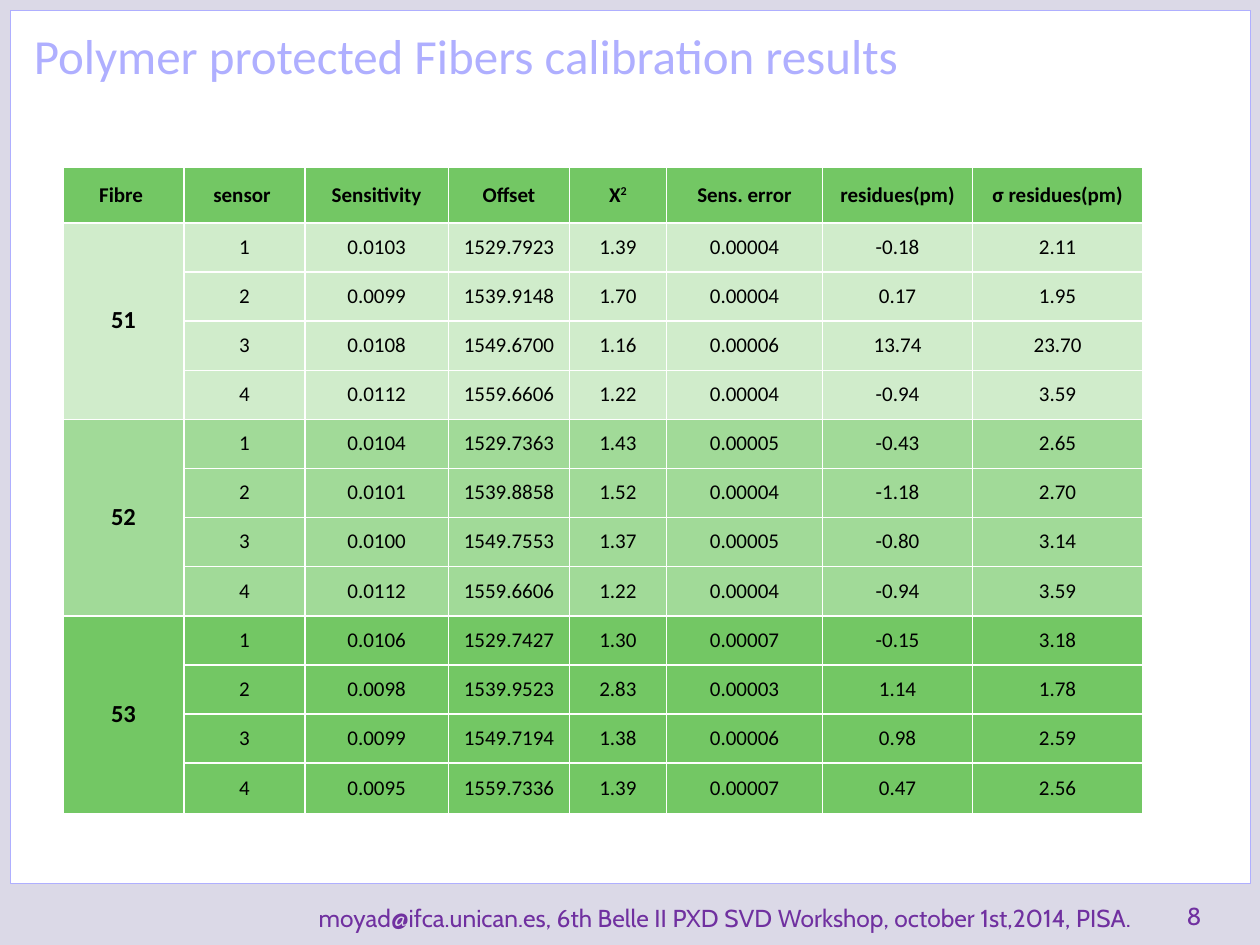
"""Build the fibre calibration results slide."""
from lxml import etree
from pptx import Presentation, util as u
from pptx.dml.color import RGBColor
from pptx.enum import shapes, text
from pptx.oxml.ns import qn

TITLE = "Polymer protected Fibers calibration results"
FOOT = "moyad@ifca.unican.es, 6th Belle II PXD SVD Workshop, october 1st,2014, PISA."
HEAD = ["Fibre ", "sensor ", "Sensitivity", "Offset", "X^2", "Sens. error",
        "residues(pm)", "σ residues(pm)"]
FIBRES = [
    ("51", "D0ECCB", [
        "0.0103 1529.7923 1.39 0.00004 -0.18 2.11",
        "0.0099 1539.9148 1.70 0.00004 0.17 1.95",
        "0.0108 1549.6700 1.16 0.00006 13.74 23.70",
        "0.0112 1559.6606 1.22 0.00004 -0.94 3.59"]),
    ("52", "A1DA98", [
        "0.0104 1529.7363 1.43 0.00005 -0.43 2.65",
        "0.0101 1539.8858 1.52 0.00004 -1.18 2.70",
        "0.0100 1549.7553 1.37 0.00005 -0.80 3.14",
        "0.0112 1559.6606 1.22 0.00004 -0.94 3.59"]),
    ("53", "73C764", [
        "0.0106 1529.7427 1.30 0.00007 -0.15 3.18",
        "0.0098 1539.9523 2.83 0.00003 1.14 1.78",
        "0.0099 1549.7194 1.38 0.00006 0.98 2.59",
        "0.0095 1559.7336 1.39 0.00007 0.47 2.56"]),
]
COLS = [0.96, 0.96, 1.14, 0.96, 0.77, 1.24, 1.19, 1.35]
ROWS = [0.44] + [0.39] * 11 + [0.4]
GREEN, LILAC, PURPLE = "73C764", "AFAFFF", "7030A0"


def color(code):
    """Turn a hex string into a colour."""
    return RGBColor.from_string(code)


def add_run(para, words, size, face, code, bold=False):
    """Add one styled run to a paragraph."""
    run = para.add_run()
    run.text = words
    font = run.font
    font.size, font.name, font.bold = u.Pt(size), face, bold
    font.color.rgb = color(code)
    return run


def add_label(slide, place, words, size, face, code, anchor, align):
    """Add a one-line text box."""
    box = slide.shapes.add_textbox(*map(u.Inches, place))
    frame = box.text_frame
    frame.word_wrap = True
    frame.vertical_anchor = anchor
    para = frame.paragraphs[0]
    para.alignment = align
    add_run(para, words, size, face, code)


def style_cell(cell, fill):
    """Give a cell its borders, fill, margins and anchor."""
    props = cell._tc.get_or_add_tcPr()
    for side in ("lnL", "lnR", "lnT", "lnB"):
        line = etree.SubElement(props, qn("a:" + side), w=str(u.Pt(1)))
        solid = etree.SubElement(line, qn("a:solidFill"))
        etree.SubElement(solid, qn("a:srgbClr"), val="FFFFFF")
    cell.fill.solid()
    cell.fill.fore_color.rgb = color(fill)
    cell.margin_left = cell.margin_top = cell.margin_right = u.Inches(0.01)
    cell.margin_bottom = 0
    cell.vertical_anchor = text.MSO_ANCHOR.MIDDLE


def write_cell(cell, words, size=12, bold=False):
    """Write centred text, raising what follows a caret."""
    para = cell.text_frame.paragraphs[0]
    para.alignment = text.PP_ALIGN.CENTER
    para.line_spacing = 0.8
    base, _, power = words.partition("^")
    add_run(para, base, size, "Calibri", "000000", bold)
    if power:
        run = add_run(para, power, size, "Calibri", "000000", bold)
        run._r.get_or_add_rPr().set("baseline", "30000")


def add_grid(slide):
    """Add the results table."""
    place = (0.5, 1.33, sum(COLS), sum(ROWS))
    grid = slide.shapes.add_table(len(ROWS), len(COLS), *map(u.Inches, place)).table
    for col, wide in zip(grid.columns, COLS):
        col.width = u.Inches(wide)
    for row, high in zip(grid.rows, ROWS):
        row.height = u.Inches(high)
    fills = [GREEN] + [fill for _, fill, rows in FIBRES for _ in rows]
    for row, fill in zip(grid.rows, fills):
        for cell in row.cells:
            style_cell(cell, fill)
    for c, words in enumerate(HEAD):
        write_cell(grid.cell(0, c), words, bold=True)
    top = 1
    for name, _, rows in FIBRES:
        grid.cell(top, 0).merge(grid.cell(top + len(rows) - 1, 0))
        write_cell(grid.cell(top, 0), name, 14, True)
        for r, row in enumerate(rows):
            for c, words in enumerate([str(r + 1)] + row.split(), 1):
                write_cell(grid.cell(top + r, c), words)
        top += len(rows)


def main():
    """Build and save the slide."""
    deck = Presentation()
    deck.slide_width, deck.slide_height = u.Inches(10), u.Inches(7.5)
    slide = deck.slides.add_slide(deck.slide_layouts[6])
    back = slide.background.fill
    back.solid()
    back.fore_color.rgb = color("DBD9E7")
    panel = slide.shapes.add_shape(shapes.MSO_SHAPE.RECTANGLE,
                                   *map(u.Inches, (0.08, 0.08, 9.84, 6.93)))
    panel.shadow.inherit = False
    panel.fill.solid()
    panel.fill.fore_color.rgb = color("FFFFFF")
    panel.line.color.rgb = color(LILAC)
    panel.line.width = u.Pt(0.25)
    anchor, align = text.MSO_ANCHOR, text.PP_ALIGN
    add_label(slide, (0.17, 0.15, 7.75, 1.26), TITLE, 28, "Calibri", LILAC,
              anchor.TOP, align.LEFT)
    add_label(slide, (9.32, 6.93, 0.58, 0.5), "8", 14, "Cabin", PURPLE,
              anchor.BOTTOM, align.LEFT)
    add_label(slide, (1.83, 6.95, 7.25, 0.5), FOOT, 14, "Cabin", PURPLE,
              anchor.BOTTOM, align.RIGHT)
    add_grid(slide)
    deck.save("out.pptx")


if __name__ == "__main__":
    main()
